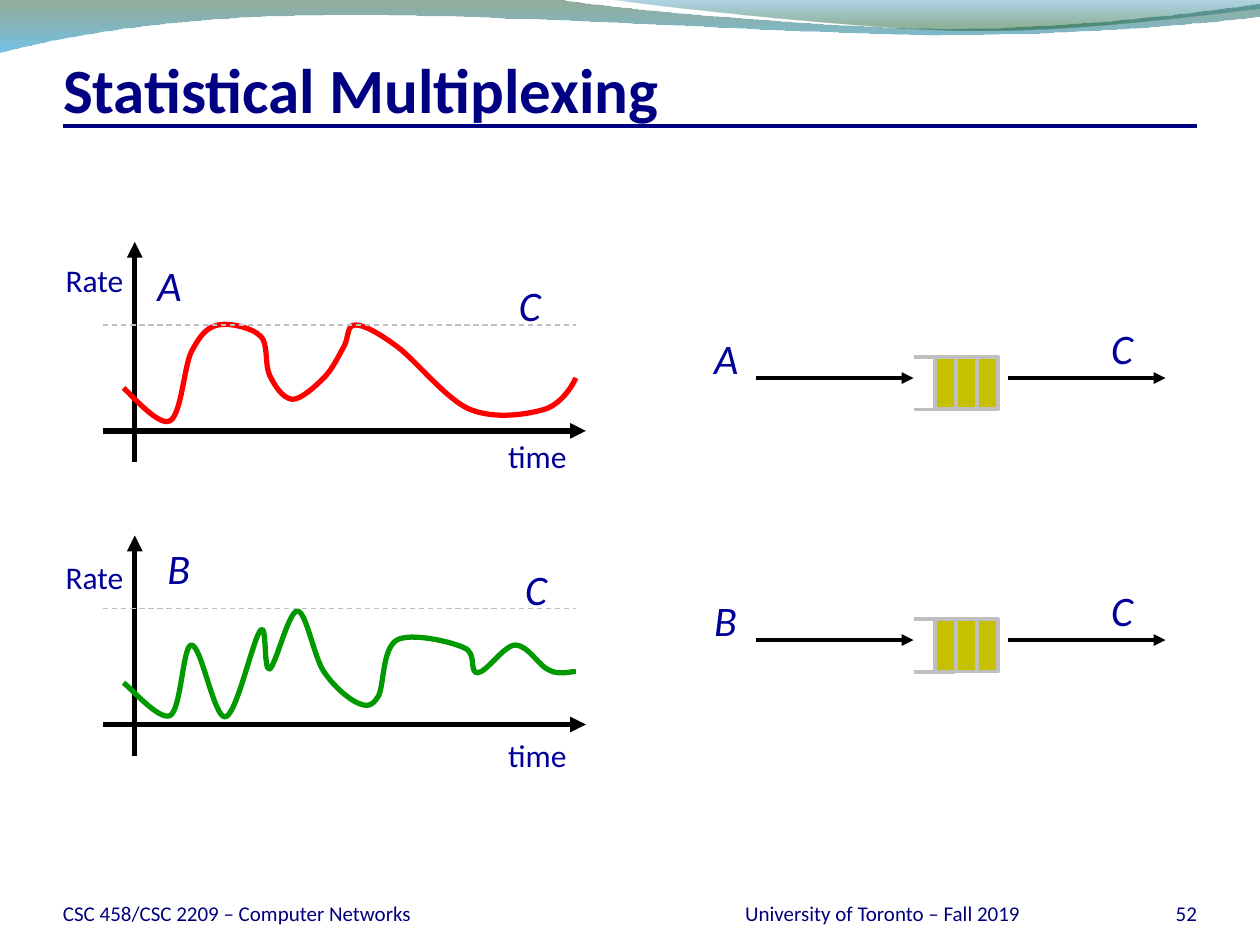
from lxml import etree
from pptx import Presentation
from pptx.dml import color
from pptx.enum import dml, shapes, text
from pptx.oxml import ns
from pptx.util import Inches, Pt

NAVY, INK, GREY, BLACK = "000082", "000099", "BFBFBF", "000000"
LEFT, MID, RIGHT = text.PP_ALIGN.LEFT, text.PP_ALIGN.CENTER, text.PP_ALIGN.RIGHT
RATE_A = [
    (0.98, 3.08), (1.04, 3.13), (1.26, 3.39), (1.35, 3.34), (1.44, 3.29), (1.46, 2.91),
    (1.52, 2.79), (1.59, 2.66), (1.64, 2.6), (1.73, 2.58), (1.82, 2.56), (2, 2.6),
    (2.07, 2.67), (2.13, 2.73), (2.1, 2.89), (2.14, 2.98), (2.18, 3.06), (2.24, 3.16),
    (2.32, 3.17), (2.39, 3.17), (2.5, 3.07), (2.57, 3), (2.64, 2.93), (2.69, 2.82),
    (2.73, 2.75), (2.77, 2.68), (2.75, 2.58), (2.82, 2.58), (2.89, 2.58), (3, 2.64),
    (3.15, 2.75), (3.3, 2.86), (3.54, 3.17), (3.73, 3.25), (3.93, 3.33), (4.18, 3.29),
    (4.32, 3.25), (4.45, 3.21), (4.54, 3.07), (4.57, 3)]
RATE_B = [
    (0.98, 5.42), (1.04, 5.46), (1.26, 5.72), (1.35, 5.68), (1.44, 5.63), (1.45, 5.12),
    (1.52, 5.12), (1.6, 5.12), (1.7, 5.71), (1.79, 5.69), (1.88, 5.67), (2.01, 5.06),
    (2.07, 5), (2.12, 4.94), (2.09, 5.33), (2.14, 5.31), (2.19, 5.28), (2.29, 4.85),
    (2.36, 4.85), (2.43, 4.85), (2.49, 5.21), (2.57, 5.33), (2.65, 5.45), (2.77, 5.55),
    (2.84, 5.58), (2.91, 5.61), (2.95, 5.61), (3, 5.53), (3.05, 5.45), (3.03, 5.15),
    (3.15, 5.08), (3.26, 5.02), (3.57, 5.09), (3.68, 5.14), (3.79, 5.18), (3.72, 5.34),
    (3.79, 5.34), (3.86, 5.34), (4, 5.12), (4.09, 5.12), (4.19, 5.12), (4.28, 5.29),
    (4.36, 5.32), (4.44, 5.36), (4.52, 5.33), (4.57, 5.33)]
BACK = [
    (0, -0.01), (4.4, -0.01), (4.76, 0.06), (6.64, 0.23), (7.58, 0.23), (8.53, 0.23),
    (9.58, 0.09), (10, 0.03), (10.01, 0.13), (9.83, 0.16), (8.7, 0.28), (7.46, 0.28),
    (6.22, 0.27), (3.82, 0.1), (2.57, 0.12), (1.29, 0.13), (0.46, 0.3), (-0.01, 0.42),
    (0, -0.01)]
FRONT = [
    (4.79, -0.01), (5.09, 0.04), (6.82, 0.23), (7.69, 0.24), (8.56, 0.25), (9.61, 0.11),
    (10, 0.07), (10, -0.01), (4.79, -0.01)]


def rgb(code):
    """Turn a hex string into a colour."""
    return color.RGBColor.from_string(code)


def outline(slide, knots, steps, close=False):
    """Draw a freeform whose steps are lines (L) and cubic curves (C)."""
    dots = [(Inches(x), Inches(y)) for x, y in knots]
    pen = slide.shapes.build_freeform(*dots[0])
    pen.add_line_segments(dots[1:], close=close)
    form = pen.convert_to_shape()
    form.shadow.inherit = False
    parts = iter(list(form._element.spPr.iter(ns.qn("a:lnTo"))))
    for step in steps:
        first = next(parts)
        if step == "C":
            first.tag = ns.qn("a:cubicBezTo")
            for _ in range(2):
                part = next(parts)
                first.append(part[0])
                part.getparent().remove(part)
    return form


def wave(slide, knots, steps, stops):
    """Draw a translucent wave with a vertical gradient."""
    form = outline(slide, knots, steps, True)
    form.line.fill.background()
    form.fill.gradient()
    form.fill.gradient_angle = 270
    for stop, (place, code, solid) in zip(form.fill.gradient_stops, stops):
        stop.position = place
        stop.color.rgb = rgb(code)
    tones = form._element.spPr.iter(ns.qn("a:srgbClr"))
    for tone, (place, code, solid) in zip(tones, stops):
        etree.SubElement(tone, ns.qn("a:alpha"), val=str(solid * 1000))


def curve(slide, knots, code):
    """Draw an open rate curve."""
    form = outline(slide, knots, "C" * (len(knots) // 3))
    form.fill.background()
    form.line.color.rgb = rgb(code)
    form.line.width = Pt(3)


def line(pool, x1, y1, x2, y2, code, width, dash=False, arrow=False):
    """Draw a straight line, with an optional dash or arrowhead."""
    ends = [Inches(v) for v in (x1, y1, x2, y2)]
    rule = pool.add_connector(shapes.MSO_CONNECTOR.STRAIGHT, *ends)
    rule.line.color.rgb = rgb(code)
    rule.line.width = Pt(width)
    if dash:
        rule.line.dash_style = dml.MSO_LINE.DASH
    if arrow:
        etree.SubElement(rule.line._get_or_add_ln(), ns.qn("a:tailEnd"), type="triangle")
    etree.SubElement(rule._element.spPr, ns.qn("a:effectLst"))


def write(frame, words, size, code, align=LEFT, bold=False, slant=False):
    """Add one styled run to a text frame."""
    para = frame.paragraphs[0]
    para.alignment = align
    run = para.add_run()
    run.text = words
    font = run.font
    font.name, font.size, font.bold, font.italic = "Calibri", Pt(size), bold, slant
    font.color.rgb = rgb(code)


def inset(frame, base=0):
    """Clear the margins and anchor the text at the bottom."""
    frame.margin_left = frame.margin_right = frame.margin_bottom = 0
    frame.margin_top = Inches(base)
    frame.vertical_anchor = text.MSO_ANCHOR.BOTTOM
    frame.word_wrap = True


def label(slide, x, y, words, wide=0.38):
    """Place a caption, or a large italic letter for a single character."""
    letter = len(words) == 1
    high = 0.5 if letter else 0.4
    box = slide.shapes.add_textbox(Inches(x), Inches(y), Inches(wide), Inches(high))
    frame = box.text_frame
    frame.word_wrap = False
    frame.auto_size = text.MSO_AUTO_SIZE.SHAPE_TO_FIT_TEXT
    write(frame, words, 24 if letter else 18, INK, LEFT if letter else MID, slant=letter)


def footer(slide, x, wide, words, align):
    """Place one footer text."""
    box = slide.shapes.add_textbox(Inches(x), Inches(6.95), Inches(wide), Inches(0.4))
    inset(box.text_frame)
    write(box.text_frame, words, 12, "00007C", align)


def graph(slide, top, cap, knots, code):
    """Draw the axes, rate curve and capacity line of one flow."""
    pool = slide.shapes
    line(pool, 1.07, top + 1.75, 1.07, top, BLACK, 3, arrow=True)
    line(pool, 0.82, top + 1.5, 4.65, top + 1.5, BLACK, 3, arrow=True)
    curve(slide, knots, code)
    line(pool, 0.82, cap, 4.57, cap, GREY, 0.75, dash=True)


def queue(slide, y, name):
    """Draw a flow that enters a buffer and leaves at rate C."""
    line(slide.shapes, 6, y, 7.25, y, BLACK, 2.25, arrow=True)
    pool = slide.shapes.add_group_shape().shapes
    top, high, wide = y - 0.17, 0.42, 1 / 6
    for i in range(3):
        cell = pool.add_shape(shapes.MSO_SHAPE.RECTANGLE, Inches(7.42 + i * wide),
                              Inches(top), Inches(wide), Inches(high))
        cell.shadow.inherit = False
        cell.fill.solid()
        cell.fill.fore_color.rgb = rgb("C5C000")
        cell.line.color.rgb = rgb(GREY)
        cell.line.width = Pt(2.25)
    for edge in (top, top + high):
        line(pool, 7.25, edge, 7.58, edge, GREY, 2.25)
    line(slide.shapes, 8, y, 9.25, y, BLACK, 2.25, arrow=True)
    label(slide, 5.57, y - 0.41, name)
    label(slide, 8.72, y - 0.49, "C")


def heading(slide, words):
    """Fill and place the title."""
    title = slide.shapes.title
    title.left, title.top, title.width, title.height = map(Inches, (0.5, 0.33, 9, 0.67))
    inset(title.text_frame, 0.05)
    write(title.text_frame, words, 36, NAVY, bold=True)


def main():
    """Build the slide."""
    deck = Presentation()
    deck.slide_width, deck.slide_height = Inches(10), Inches(7.5)
    slide = deck.slides.add_slide(deck.slide_layouts[5])
    wave(slide, BACK, "LCCLCCCL", [(0, "0F461E", 45), (1, "0090D6", 55)])
    wave(slide, FRONT, "CCLL", [(0, "0076AF", 30), (0.8, "0D5821", 45)])
    line(slide.shapes, 0.5, 1, 9.5, 1, NAVY, 2.25)
    heading(slide, "Statistical Multiplexing")
    footer(slide, 0.5, 4.83, "CSC 458/CSC 2209 – Computer Networks", LEFT)
    footer(slide, 5.42, 3.17, "University of Toronto – Fall 2019", MID)
    footer(slide, 8.67, 0.83, "52", RIGHT)
    graph(slide, 1.92, 2.58, RATE_A, "FF0000")
    graph(slide, 4.25, 4.83, RATE_B, "009900")
    for x, y, words in ((1.15, 2.01, "A"), (4.02, 2.17, "C"),
                        (1.23, 4.26, "B"), (4.07, 4.42, "C")):
        label(slide, x, y, words)
    for rate, time in ((2.02, 3.42), (4.38, 5.79)):
        label(slide, 0.42, rate, "Rate", 0.66)
        label(slide, 3.93, time, "time", 0.67)
    queue(slide, 3, "A")
    queue(slide, 5.08, "B")
    deck.save("out.pptx")


if __name__ == "__main__":
    main()
